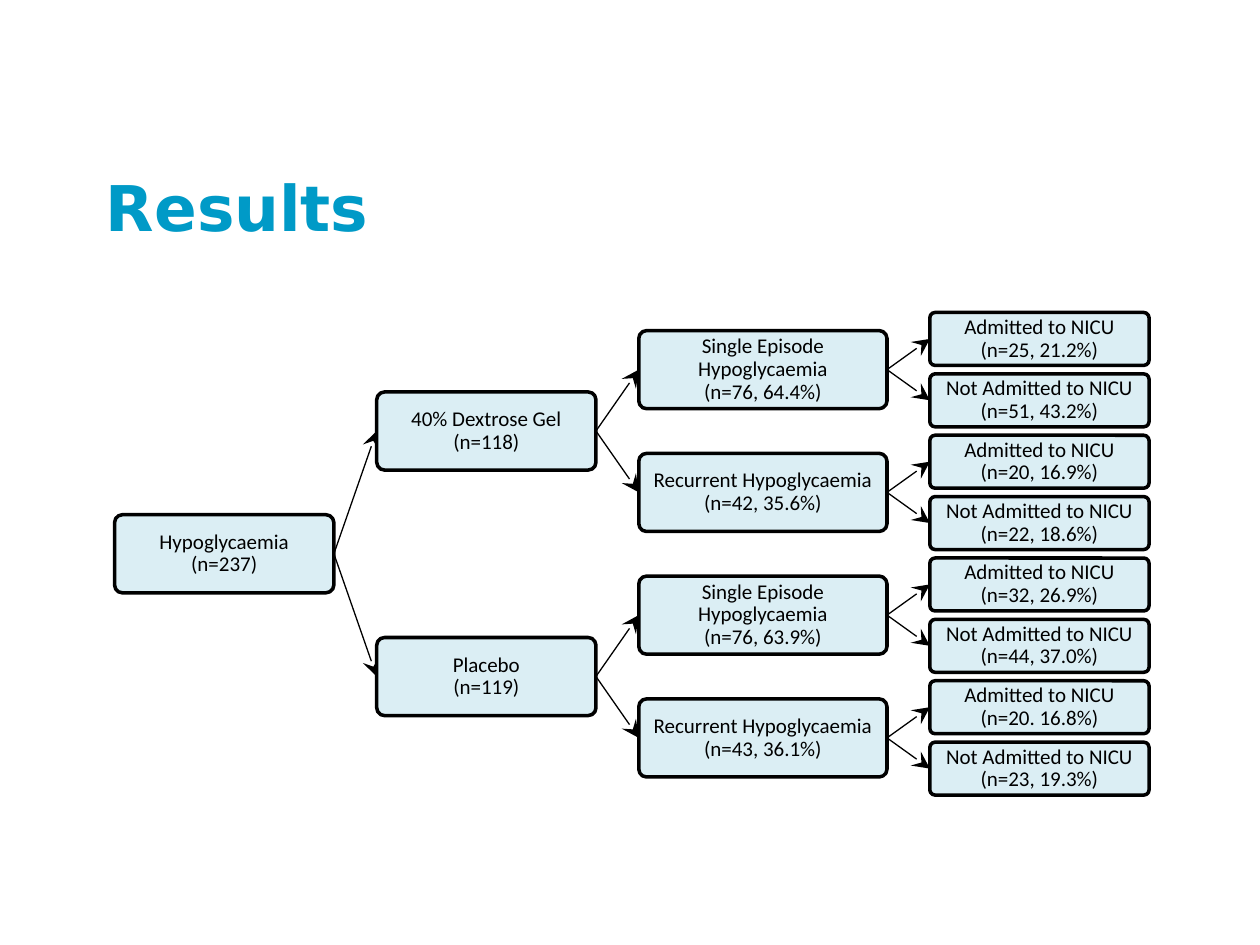
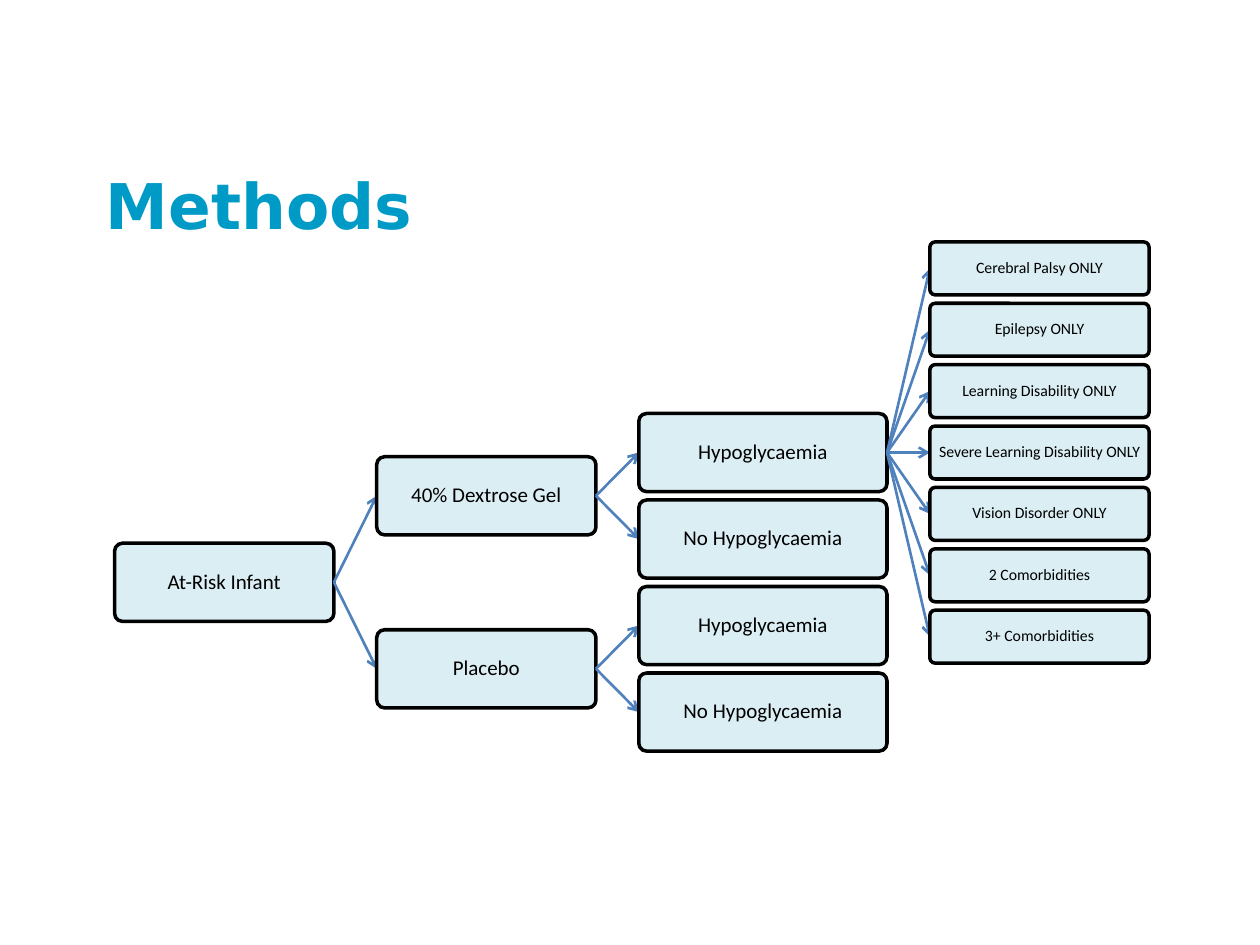
from dataclasses import dataclass

from lxml.etree import SubElement
from pptx import Presentation
from pptx.dml.color import RGBColor
from pptx.enum.shapes import MSO_CONNECTOR, MSO_SHAPE
from pptx.enum.text import MSO_ANCHOR, MSO_AUTO_SIZE, PP_ALIGN
from pptx.oxml.ns import qn
from pptx.util import Inches, Pt


@dataclass(frozen=True)
class Theme:
    heading: str = "009AC7"
    box_fill: str = "DBEEF4"
    ink: str = "000000"
    accent: str = "4F81BD"
    title_font: str = "DejaVu Sans"
    body_font: str = "Calibri"
    title_size: float = 36
    body_size: float = 12
    small_size: float = 9
    box_line: float = 2


THEME = Theme()

RESULTS_TREE = ("Hypoglycaemia\v(n=237)", [
    ("40% Dextrose Gel\v(n=118)", [
        ("Single Episode Hypoglycaemia\v(n=76, 64.4%)", [
            ("Admitted to NICU\v(n=25, 21.2%)", []),
            ("Not Admitted to NICU\v(n=51, 43.2%)", []),
        ]),
        ("Recurrent Hypoglycaemia\v(n=42, 35.6%)", [
            ("Admitted to NICU\v(n=20, 16.9%)", []),
            ("Not Admitted to NICU\v(n=22, 18.6%)", []),
        ]),
    ]),
    ("Placebo\v(n=119)", [
        ("Single Episode Hypoglycaemia\v(n=76, 63.9%)", [
            ("Admitted to NICU\v(n=32, 26.9%)", []),
            ("Not Admitted to NICU\v(n=44, 37.0%)", []),
        ]),
        ("Recurrent Hypoglycaemia\v(n=43, 36.1%)", [
            ("Admitted to NICU\v(n=20. 16.8%)", []),
            ("Not Admitted to NICU\v(n=23, 19.3%)", []),
        ]),
    ]),
])

COMORBIDITIES = [
    "Cerebral Palsy ONLY",
    "Epilepsy ONLY",
    "Learning Disability ONLY",
    "Severe Learning Disability ONLY",
    "Vision Disorder ONLY",
    "2 Comorbidities",
    "3+ Comorbidities",
]

METHODS_TREE = ("At-Risk Infant", [
    ("40% Dextrose Gel", [
        ("Hypoglycaemia", [(name, []) for name in COMORBIDITIES]),
        ("No Hypoglycaemia", []),
    ]),
    ("Placebo", [
        ("Hypoglycaemia", []),
        ("No Hypoglycaemia", []),
    ]),
])

SLIDES = [
    {
        "title": "Results", "title_box": (0.74, 1.28, 4.78, 0.72),
        "tree": RESULTS_TREE, "first_centre": 2.69, "steps": {2: 6.82 / 7, 3: 3.41 / 7},
        "leaf_size": THEME.body_size,
        "arrow": {"color": THEME.ink, "width": 0.75, "head": "stealth", "head_size": "lg"},
    },
    {
        "title": "Methods", "title_box": (0.74, 1.26, 8.47, 0.72),
        "tree": METHODS_TREE, "first_centre": 2.13, "steps": {2: 2.06 / 3, 3: 3.41 / 7},
        "leaf_size": THEME.small_size,
        "arrow": {"color": THEME.accent, "width": 1.5, "head": "arrow", "head_size": "med"},
    },
]

COLUMN_WIDTHS = [1.74, 1.74, 1.97, 1.74]
COLUMN_HEIGHTS = [0.62, 0.62, 0.62, 0.42]
COLUMN_GAP = 0.34
FIRST_LEFT = 0.91
COLUMN_LEFTS = [
    FIRST_LEFT + sum(COLUMN_WIDTHS[:level]) + level * COLUMN_GAP
    for level in range(len(COLUMN_WIDTHS))
]
LEFT_SITE, RIGHT_SITE = 1, 3


def write_text(shape, text, *, font, size, color, bold=False, align=PP_ALIGN.LEFT,
               inset=None, line_spacing=None):
    frame = shape.text_frame
    frame.word_wrap = True
    frame.auto_size = MSO_AUTO_SIZE.NONE
    frame.vertical_anchor = MSO_ANCHOR.MIDDLE
    if inset is not None:
        frame.margin_left = frame.margin_right = Inches(inset)
        frame.margin_top = frame.margin_bottom = Inches(inset)
    frame.text = text
    paragraph = frame.paragraphs[0]
    paragraph.alignment = align
    if line_spacing:
        paragraph.line_spacing = line_spacing
    for run in paragraph.runs:
        run.font.name = font
        run.font.size = Pt(size)
        run.font.bold = bold
        run.font.color.rgb = RGBColor.from_string(color)


def add_title(slide, text, box):
    title = slide.shapes.title
    title.left, title.top, title.width, title.height = map(Inches, box)
    write_text(title, text, font=THEME.title_font, size=THEME.title_size,
               color=THEME.heading, bold=True)


def add_box(slide, text, level, centre, size):
    height = COLUMN_HEIGHTS[level]
    box = slide.shapes.add_shape(
        MSO_SHAPE.ROUNDED_RECTANGLE, Inches(COLUMN_LEFTS[level]),
        Inches(centre - height / 2), Inches(COLUMN_WIDTHS[level]), Inches(height))
    box.adjustments[0] = 0.1
    box.shadow.inherit = False
    box.fill.solid()
    box.fill.fore_color.rgb = RGBColor.from_string(THEME.box_fill)
    box.line.color.rgb = RGBColor.from_string(THEME.ink)
    box.line.width = Pt(THEME.box_line)
    write_text(box, text, font=THEME.body_font, size=size, color=THEME.ink,
               align=PP_ALIGN.CENTER, inset=0.03, line_spacing=0.9)
    return box


def add_arrow(slide, parent, *, color, width, head, head_size):
    arrow = slide.shapes.add_connector(MSO_CONNECTOR.STRAIGHT, 0, 0, 0, 0)
    arrow.begin_connect(parent, RIGHT_SITE)
    arrow.line.color.rgb = RGBColor.from_string(color)
    arrow.line.width = Pt(width)
    SubElement(arrow.line._get_or_add_ln(), qn("a:tailEnd"),
               type=head, w=head_size, len=head_size)
    SubElement(arrow._element.spPr, qn("a:effectLst"))
    return arrow


def place(node, level, steps, cursor):
    text, children = node
    placed = []
    for index, child in enumerate(children):
        if index and child[1] == []:
            cursor = placed[-1]["centre"] + steps[level + 1]
        branch = place(child, level + 1, steps, cursor)
        placed.append(branch)
        cursor = branch["last_leaf"] + steps[branch["leaf_level"]]
    if not placed:
        return {"text": text, "centre": cursor, "children": [],
                "last_leaf": cursor, "leaf_level": level}
    return {"text": text, "children": placed,
            "centre": (placed[0]["centre"] + placed[-1]["centre"]) / 2,
            "last_leaf": placed[-1]["last_leaf"],
            "leaf_level": placed[-1]["leaf_level"]}


def draw(slide, node, level, content):
    size = content["leaf_size"] if level == len(COLUMN_WIDTHS) - 1 else THEME.body_size
    box = add_box(slide, node["text"], level, node["centre"], size)
    for child in node["children"]:
        arrow = add_arrow(slide, box, **content["arrow"])
        child_box = draw(slide, child, level + 1, content)
        arrow.end_connect(child_box, LEFT_SITE)
    return box


def main():
    presentation = Presentation()
    presentation.slide_width, presentation.slide_height = Inches(10), Inches(7.5)
    title_only = presentation.slide_layouts[5]
    for content in SLIDES:
        slide = presentation.slides.add_slide(title_only)
        add_title(slide, content["title"], content["title_box"])
        tree = place(content["tree"], 0, content["steps"], content["first_centre"])
        draw(slide, tree, 0, content)
    presentation.save("out.pptx")


if __name__ == "__main__":
    main()
